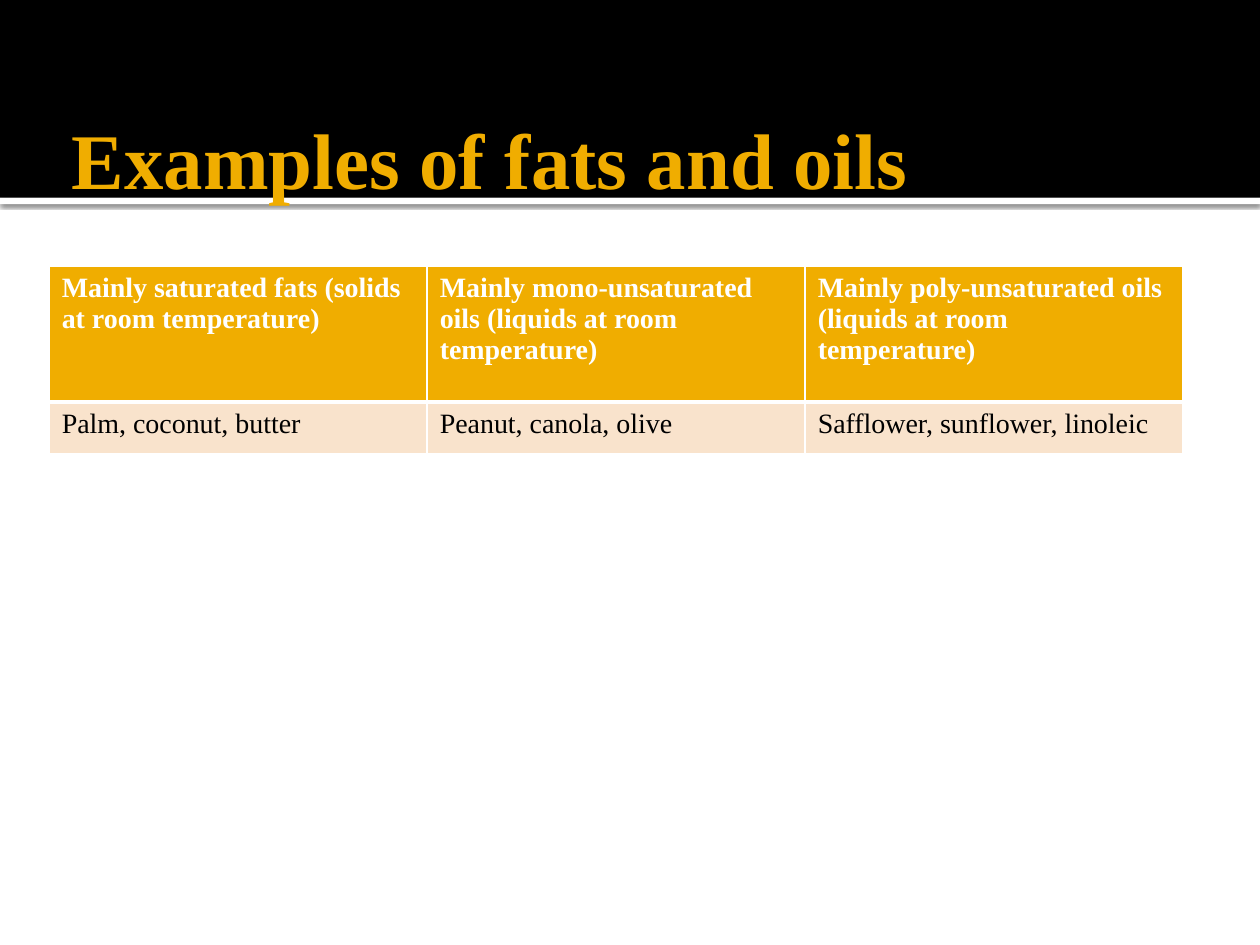
import pptx
import pptx.dml.color
import pptx.enum.shapes
import pptx.enum.text
import pptx.oxml
import pptx.oxml.ns
import pptx.util
from dataclasses import dataclass
from pptx.util import Inches


@dataclass(frozen=True)
class Theme:
    font: str = "Times New Roman"
    gold: str = "F0AD00"
    cream: str = "F9E3CC"
    white: str = "FFFFFF"
    black: str = "000000"
    title_size: int = 45
    table_size: int = 16


theme = Theme()
rgb = pptx.dml.color.RGBColor.from_string
namespace = pptx.oxml.ns.nsdecls("a")


def style_text(frame, size, color, bold):
    font = frame.paragraphs[0].font
    font.name = theme.font
    font.size = pptx.util.Pt(size)
    font.bold = bold
    font.color.rgb = rgb(color)


def add_border(cell, side, points):
    """Draw a white line on one side (L, R, T or B); call before filling."""
    cell._tc.get_or_add_tcPr().append(pptx.oxml.parse_xml(
        f'<a:ln{side} {namespace} w="{pptx.util.Pt(points)}"><a:solidFill>'
        f'<a:srgbClr val="{theme.white}"/></a:solidFill></a:ln{side}>'))


deck = pptx.Presentation()
deck.slide_width, deck.slide_height = Inches(10), Inches(7.5)
page = deck.slides.add_slide(deck.slide_layouts[5])
page.background.fill.solid()
page.background.fill.fore_color.rgb = rgb(theme.white)

# Header bands, placed behind the title
bands = []
for top, height, color in [(1.57, 0.05, theme.white), (0, 1.57, theme.black)]:
    band = page.shapes.add_shape(
        pptx.enum.shapes.MSO_SHAPE.RECTANGLE,
        0, Inches(top), deck.slide_width, Inches(height))
    band.shadow.inherit = False
    band.fill.solid()
    band.fill.fore_color.rgb = rgb(color)
    band.line.fill.background()
    page.shapes._spTree.insert(2 + len(bands), band._element)
    bands.append(band)

effects = bands[0]._element.spPr.find(pptx.oxml.ns.qn("a:effectLst"))
effects.append(pptx.oxml.parse_xml(
    f'<a:outerShdw {namespace} blurRad="{pptx.util.Pt(2.5)}" '
    f'dist="{pptx.util.Pt(0.8)}" dir="5400000" rotWithShape="0">'
    f'<a:srgbClr val="{theme.black}"><a:alpha val="60000"/></a:srgbClr>'
    '</a:outerShdw>'))

title = page.shapes.title
title.left, title.top = Inches(0.47), Inches(0.78)
title.width, title.height = Inches(9), Inches(0.94)
frame = title.text_frame
frame.text = "Examples of fats and oils"
frame.word_wrap = True
frame.auto_size = pptx.enum.text.MSO_AUTO_SIZE.NONE
frame.vertical_anchor = pptx.enum.text.MSO_ANCHOR.MIDDLE
frame.margin_left = Inches(0.1)
frame.margin_right = frame.margin_top = frame.margin_bottom = Inches(0.05)
frame.paragraphs[0].alignment = pptx.enum.text.PP_ALIGN.LEFT
style_text(frame, theme.title_size, theme.gold, True)

columns = [
    ("Mainly saturated fats (solids at room temperature)",
     "Palm, coconut, butter"),
    ("Mainly mono-unsaturated oils (liquids at room temperature)",
     "Peanut, canola, olive"),
    ("Mainly poly-unsaturated oils (liquids at room temperature)",
     "Safflower, sunflower, linoleic"),
]
# Row height, fill, text colour, bold, top and bottom border widths
row_styles = [
    (1.08, theme.gold, theme.white, True, 1, 3),
    (0.41, theme.cream, theme.black, False, 3, 1),
]
table = page.shapes.add_table(
    len(row_styles), len(columns),
    Inches(0.39), Inches(2.11), Inches(9), Inches(1.49)).table
for row, (height, fill, color, bold, top, bottom) in enumerate(row_styles):
    table.rows[row].height = Inches(height)
    for column, texts in enumerate(columns):
        cell = table.cell(row, column)
        cell.text = texts[row]
        style_text(cell.text_frame, theme.table_size, color, bold)
        for side, points in zip("LRTB", (1, 1, top, bottom)):
            add_border(cell, side, points)
        cell.fill.solid()
        cell.fill.fore_color.rgb = rgb(fill)

deck.save("out.pptx")
